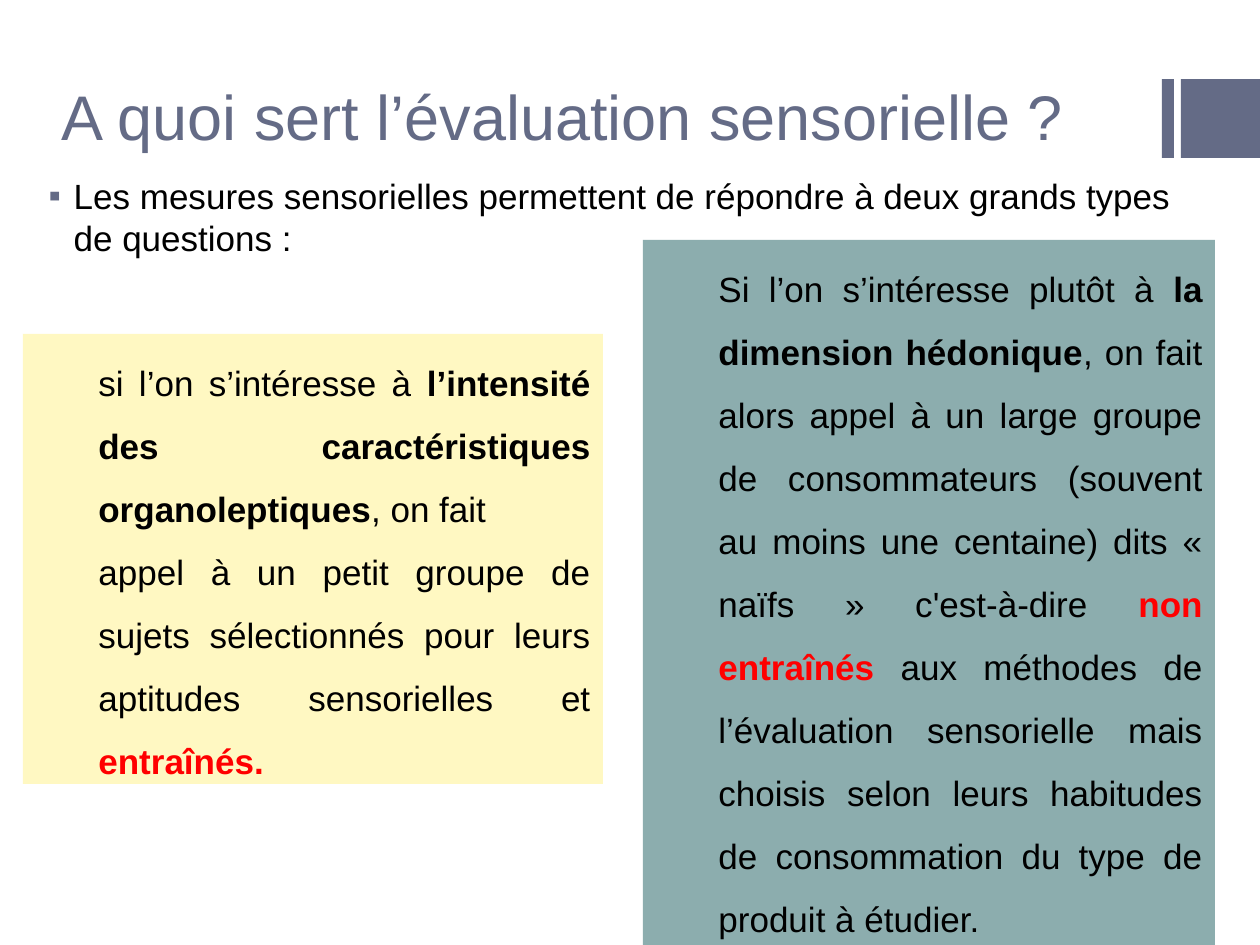
import pptx
import pptx.dml.color
import pptx.enum.shapes
import pptx.enum.text
import pptx.oxml
import pptx.oxml.ns
import pptx.util

RGBColor = pptx.dml.color.RGBColor
SLATE = RGBColor(0x64, 0x6B, 0x86)
YELLOW = RGBColor(0xFF, 0xF8, 0xC2)
TEAL = RGBColor(0x8C, 0xAD, 0xAE)
BLACK = RGBColor(0, 0, 0)
RED = RGBColor(0xFF, 0, 0)

ALIGN = pptx.enum.text.PP_ALIGN
ANCHOR = pptx.enum.text.MSO_ANCHOR
AUTO_SIZE = pptx.enum.text.MSO_AUTO_SIZE

PX_PER_INCH = 126
SLIDE_WIDTH, SLIDE_HEIGHT = 1260, 945


def emu(px):
    return pptx.util.Emu(round(px * 914400 / PX_PER_INCH))


def apply(target, values):
    for name, value in values.items():
        setattr(target, name, value)


class SlideBuilder:
    text_style = {"name": "Arial", "size": pptx.util.Pt(20), "bold": False}
    title_style = {**text_style, "size": pptx.util.Pt(36)}
    strong = {"bold": True}

    def __init__(self, presentation):
        # Layout 1 holds a title and a body
        self.slide = presentation.slides.add_slide(presentation.slide_layouts[1])

    def place(self, shape, box):
        apply(shape, dict(zip(("left", "top", "width", "height"), map(emu, box))))

    def add_run(self, paragraph, text, color=BLACK, style=text_style, **changes):
        run = paragraph.add_run()
        run.text = text
        apply(run.font, {**style, **changes})
        run.font.color.rgb = color

    def indent(self, paragraph, left, first):
        properties = paragraph._p.get_or_add_pPr()
        properties.set("marL", str(emu(left)))
        properties.set("indent", str(emu(first)))
        return properties

    def title(self, box, text):
        shape = self.slide.shapes.title
        self.place(shape, box)
        apply(shape.text_frame, {"vertical_anchor": ANCHOR.BOTTOM,
                                 "word_wrap": True, "auto_size": AUTO_SIZE.NONE})
        paragraph = shape.text_frame.paragraphs[0]
        paragraph.alignment = ALIGN.LEFT
        self.add_run(paragraph, text, SLATE, self.title_style)

    def bullet_list(self, box, items):
        shape = self.slide.placeholders[1]
        self.place(shape, box)
        frame = shape.text_frame
        apply(frame, {"word_wrap": True, "auto_size": AUTO_SIZE.NONE})
        for index, text in enumerate(items):
            paragraph = frame.add_paragraph() if index else frame.paragraphs[0]
            paragraph.space_before = pptx.util.Pt(4 if index else 0)
            properties = self.indent(paragraph, 32, -25)
            namespace = pptx.oxml.ns.nsdecls("a")
            for element in (
                f'<a:buClr {namespace}><a:srgbClr val="{SLATE}"/></a:buClr>',
                f'<a:buFont {namespace} typeface="Arial"/>',
                f'<a:buChar {namespace} char="▪"/>',
            ):
                properties.append(pptx.oxml.parse_xml(element))
            self.add_run(paragraph, text)

    def rectangle(self, box, color):
        shape = self.slide.shapes.add_shape(
            pptx.enum.shapes.MSO_SHAPE.RECTANGLE, *map(emu, box))
        shape.shadow.inherit = False
        shape.fill.solid()
        shape.fill.fore_color.rgb = color
        shape.line.fill.background()
        return shape

    def panel(self, box, color, paragraphs):
        frame = self.rectangle(box, color).text_frame
        apply(frame, {"word_wrap": True, "vertical_anchor": ANCHOR.TOP,
                      "auto_size": AUTO_SIZE.SHAPE_TO_FIT_TEXT})
        for index, runs in enumerate(paragraphs):
            paragraph = frame.add_paragraph() if index else frame.paragraphs[0]
            apply(paragraph, {"alignment": ALIGN.JUSTIFY, "level": 1,
                              "line_spacing": 1.5})
            self.indent(paragraph, 63, 0)
            for text, *changes in runs:
                self.add_run(paragraph, text, **(changes[0] if changes else {}))


def main():
    presentation = pptx.Presentation()
    presentation.slide_width = emu(SLIDE_WIDTH)
    presentation.slide_height = emu(SLIDE_HEIGHT)
    builder = SlideBuilder(presentation)
    strong = builder.strong
    warning = {**strong, "color": RED}

    # Bars at the right edge
    for left, width in ((1162, 12), (1181, 79)):
        builder.rectangle((left, 79, width, 79), SLATE)

    # Title and introduction
    builder.title((49, 0, 1057, 159), "A quoi sert l’évaluation sensorielle ?")
    builder.bullet_list((29, 168, 1176, 702), [
        "Les mesures sensorielles permettent de répondre à deux grands types "
        "de questions :"])

    # Trained panel
    builder.panel((23, 334, 580, 450), YELLOW, [
        [("si l’on s’intéresse à ",),
         ("l’intensité des caractéristiques organoleptiques", strong),
         (", on fait",)],
        [("appel à un petit groupe de sujets sélectionnés pour leurs "
          "aptitudes sensorielles et ",),
         ("entraînés.", warning)],
    ])

    # Untrained consumers
    builder.panel((643, 240, 572, 705), TEAL, [
        [("Si l’on s’intéresse plutôt à ",),
         ("la dimension hédonique", strong),
         (", on fait alors appel à un large groupe de consommateurs (souvent "
          "au moins une centaine) dits « naïfs » c'est-à-dire ",),
         ("non entraînés ", warning),
         ("aux méthodes de l’évaluation sensorielle mais choisis selon leurs "
          "habitudes de consommation du type de produit à étudier.",)],
    ])

    presentation.save("out.pptx")


if __name__ == "__main__":
    main()
